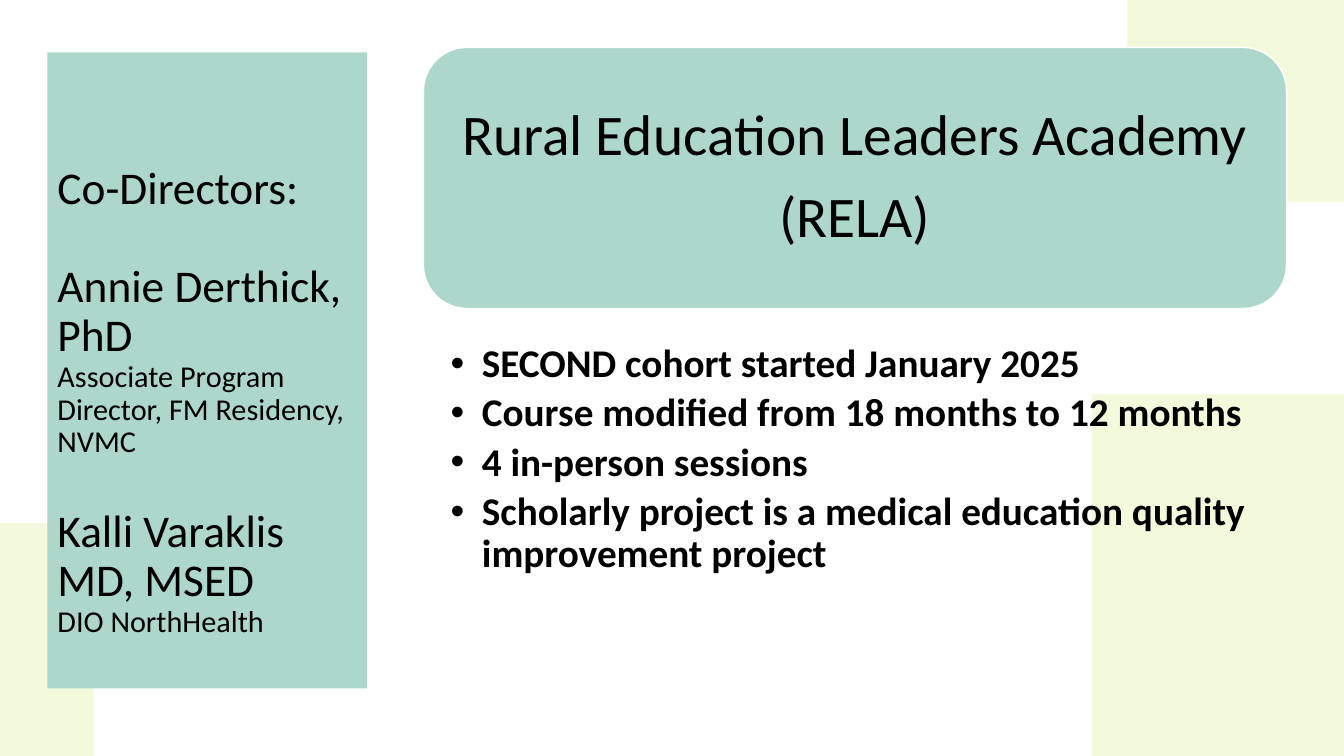
import pptx
import pptx.util
import pptx.dml.color
import pptx.enum.shapes
import pptx.enum.text
import pptx.oxml
import pptx.oxml.ns

Inches, Pt = pptx.util.Inches, pptx.util.Pt
RGB = pptx.dml.color.RGBColor
Align, Anchor = pptx.enum.text.PP_ALIGN, pptx.enum.text.MSO_ANCHOR
Preset = pptx.enum.shapes.MSO_SHAPE

COLOURS = {"lime": "F3FADC", "mint": "ACD7CA", "white": "FFFFFF", "ink": "000000"}
LIME_BLOCKS = [(0, 5.19, 0.93, 2.31), (10.83, 3.91, 2.5, 3.59), (11.18, 0, 2.15, 2)]
DIRECTORS = [
    ("Co-Directors:", 32.4, 0),
    ("Annie Derthick, PhD", 32.4, 35),
    ("Associate Program Director, FM Residency, NVMC", 21.6, 0),
    ("Kalli Varaklis MD, MSED", 32.4, 35),
    ("DIO NorthHealth", 21.6, 0),
]
HEADING = [("Rural Education Leaders Academy", 41, 0), ("(RELA)", 41, 14)]
FACTS = [
    "SECOND cohort started January 2025",
    "Course modified from 18 months to 12 months",
    "4 in-person sessions",
    "Scholarly project is a medical education quality improvement project",
]


class AcademySlide:
    """Holds the style and the current page, and adds each kind of element."""

    font = "Calibri"

    def __init__(self, deck):
        self.page = deck.slides.add_slide(deck.slide_layouts[1])

    def paint(self, box, fill, line=None):
        box.fill.solid()
        box.fill.fore_color.rgb = RGB.from_string(COLOURS[fill])
        if line:
            box.line.color.rgb = RGB.from_string(COLOURS[line])
            box.line.width = Pt(1)
        else:
            box.line.fill.background()

    def shape(self, preset, place, fill, line=None):
        box = self.page.shapes.add_shape(preset, *map(Inches, place))
        box.shadow.inherit = False
        self.paint(box, fill, line)
        return box

    def placeholder(self, index, place):
        box = self.page.placeholders[index]
        for name, value in zip(("left", "top", "width", "height"), place):
            setattr(box, name, Inches(value))
        box.element.getparent().append(box.element)
        return box

    def add_text(self, box, lines, insets, anchor, align, bold=False, bullet=None):
        frame = box.text_frame
        settings = {"word_wrap": True, "auto_size": pptx.enum.text.MSO_AUTO_SIZE.NONE,
                    "vertical_anchor": anchor}
        for side, inset in zip(("left", "top", "right", "bottom"), insets):
            settings["margin_" + side] = Inches(inset)
        for name, value in settings.items():
            setattr(frame, name, value)
        for number, (text, size, before) in enumerate(lines):
            para = frame.add_paragraph() if number else frame.paragraphs[0]
            if bullet:
                self.add_bullet(para, bullet)
            layout = {"alignment": align, "line_spacing": 0.9,
                      "space_before": Pt(before), "space_after": Pt(0)}
            for name, value in layout.items():
                setattr(para, name, value)
            span = para.add_run()
            span.text = text
            for name, value in {"name": self.font, "size": Pt(size), "bold": bold}.items():
                setattr(span.font, name, value)
            span.font.color.rgb = RGB.from_string(COLOURS["ink"])

    def add_bullet(self, para, mark):
        properties = para._p.get_or_add_pPr()
        properties.set("marL", str(Inches(0.31)))
        properties.set("indent", str(-Inches(0.31)))
        properties.append(pptx.oxml.parse_xml(
            f'<a:buChar {pptx.oxml.ns.nsdecls("a")} char="{mark}"/>'))


def main():
    deck = pptx.Presentation()
    deck.slide_width, deck.slide_height = Inches(13.33), Inches(7.5)
    slide = AcademySlide(deck)
    for place in LIME_BLOCKS:
        slide.shape(Preset.RECTANGLE, place, "lime")

    directors = slide.placeholder(0, (0.47, 0.52, 3.17, 6.31))
    slide.paint(directors, "mint")
    slide.add_text(directors, DIRECTORS, (0.1, 0.68, 0.1, 0.05), Anchor.MIDDLE, Align.LEFT)

    heading = slide.shape(Preset.ROUNDED_RECTANGLE, (4.2, 0.47, 8.56, 2.59), "mint", "white")
    slide.add_text(heading, HEADING, (0.17, 0.17, 0.17, 0.17), Anchor.MIDDLE, Align.CENTER)

    facts = slide.placeholder(1, (4.2, 3.37, 8.56, 3.63))
    lines = [(fact, 28, 5 if number else 0) for number, fact in enumerate(FACTS)]
    slide.add_text(facts, lines, (0.27, 0.04, 0.22, 0.04), Anchor.TOP, Align.LEFT,
                   bold=True, bullet="•")
    deck.save("out.pptx")


if __name__ == "__main__":
    main()
